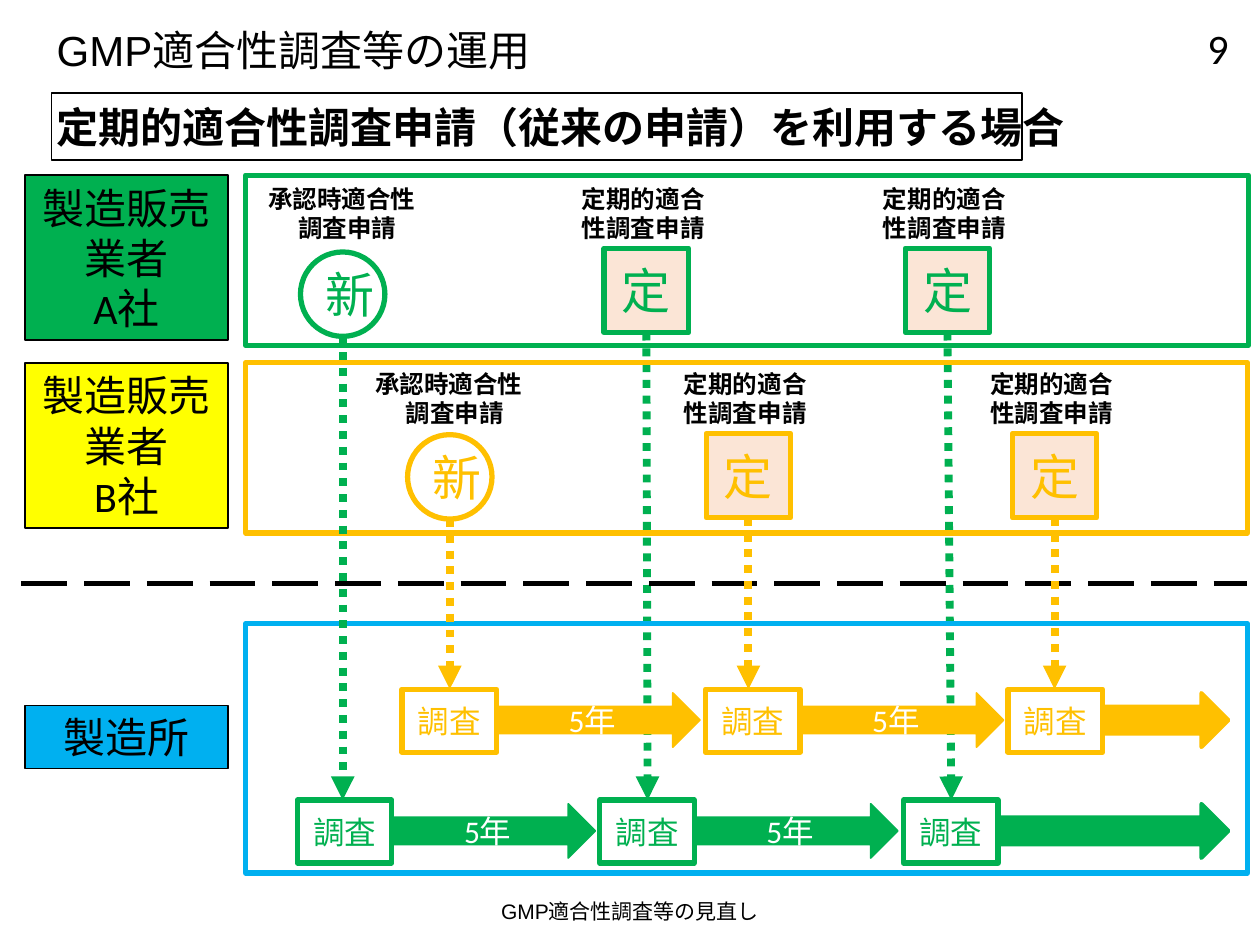
from dataclasses import dataclass

from lxml.etree import SubElement
from pptx import Presentation
from pptx.dml.color import RGBColor as Color
from pptx.enum.dml import MSO_LINE as Dash
from pptx.enum.shapes import MSO_CONNECTOR as Connector, MSO_SHAPE as Preset
from pptx.enum.text import MSO_ANCHOR as Anchor, MSO_AUTO_SIZE as AutoSize, PP_ALIGN as Align
from pptx.oxml.ns import qn
from pptx.util import Inches, Pt

COLUMNS, ROWS = 100, 75  # grid of the slide
SYMBOL = 6.7
SURVEY_WIDTH, SURVEY_HEIGHT = 7.5, 5
ARROW_HEIGHT, ARROW_END = 4.3, 97.5


@dataclass(frozen=True)
class Theme:
    black: str = "000000"
    white: str = "FFFFFF"
    green: str = "00B050"
    amber: str = "FFC000"
    yellow: str = "FFFF00"
    blue: str = "00B0F0"
    peach: str = "FBE5D6"
    heading_font: str = "Arial"
    body_font: str = "Calibri"
    footer: int = 12
    label: int = 14
    survey: int = 18
    heading: int = 24
    symbol: int = 28


@dataclass(frozen=True)
class Company:
    """A company's applications (centre columns) and the surveys that follow them."""
    name: str
    name_fill: str
    color: str
    frame_top: float
    frame_width: float
    label_top: float
    circle_top: float
    square_top: float
    centers: tuple
    targets: tuple
    survey_lefts: tuple
    survey_top: float

    def symbol_top(self, index):
        return self.square_top if index else self.circle_top


class SlideBuilder:
    def __init__(self, presentation, theme):
        self.theme = theme
        self.cell_width = presentation.slide_width / COLUMNS
        self.cell_height = presentation.slide_height / ROWS
        self.slide = presentation.slides.add_slide(presentation.slide_layouts[5])
        self.shapes = self.slide.shapes

    def place(self, left, top, width, height):
        """Turn grid lengths into slide lengths."""
        return (round(left * self.cell_width), round(top * self.cell_height),
                round(width * self.cell_width), round(height * self.cell_height))

    def set_text(self, shape, text, size, color=None, align=Align.CENTER,
                 anchor=Anchor.MIDDLE, bold=False, font=None):
        frame = shape.text_frame
        frame.text = text
        for name, value in {"word_wrap": True, "auto_size": AutoSize.NONE,
                            "vertical_anchor": anchor}.items():
            setattr(frame, name, value)
        formats = {"name": font or self.theme.body_font, "size": Pt(size), "bold": bold}
        for paragraph in frame.paragraphs:
            paragraph.alignment = align
            for name, value in formats.items():
                setattr(paragraph.font, name, value)
            paragraph.font.color.rgb = Color.from_string(color or self.theme.black)

    def title(self, box, text):
        shape = self.shapes.title
        for name, value in zip(("left", "top", "width", "height"), self.place(*box)):
            setattr(shape, name, value)
        self.set_text(shape, text, self.theme.heading, align=Align.LEFT,
                      font=self.theme.heading_font)

    def text(self, box, text, size, **style):
        shape = self.shapes.add_textbox(*self.place(*box))
        self.set_text(shape, text, size, **style)
        return shape

    def shape(self, preset, box, line, line_width, fill=None, text=None, **style):
        shape = self.shapes.add_shape(preset, *self.place(*box))
        shape.shadow.inherit = False
        if fill:
            shape.fill.solid()
            shape.fill.fore_color.rgb = Color.from_string(fill)
        else:
            shape.fill.background()
        shape.line.color.rgb = Color.from_string(line)
        shape.line.width = Pt(line_width)
        if text:
            self.set_text(shape, text, **style)

    def line(self, start, end, color, width, dash, arrow=False):
        connector = self.shapes.add_connector(Connector.STRAIGHT, *self.place(*start, *end))
        connector.line.color.rgb = Color.from_string(color)
        connector.line.width = Pt(width)
        connector.line.dash_style = dash
        properties = connector._element.spPr
        if arrow:
            SubElement(properties.find(qn("a:ln")), qn("a:tailEnd"), type="triangle")
        SubElement(properties, qn("a:effectLst"))

    def name_box(self, top, height, fill, text):
        self.shape(Preset.RECTANGLE, (2, top, 16.1, height), self.theme.black, 1, fill,
                   text, size=self.theme.heading)

    def frame(self, top, width, height, color):
        self.shape(Preset.RECTANGLE, (19.5, top, width, height), color, 3)

    def request(self, company, index):
        """Dotted arrow from an application down to its survey."""
        self.line((company.centers[index], company.symbol_top(index) + SYMBOL),
                  (company.targets[index], company.survey_top),
                  company.color, 4.5, Dash.ROUND_DOT, arrow=True)

    def application(self, company, index):
        theme, center = self.theme, company.centers[index]
        if index:
            preset, fill, symbol, offset = Preset.RECTANGLE, theme.peach, "定", 6.1
            label = "定期的適合\n性調査申請"
        else:
            preset, fill, symbol, offset = Preset.OVAL, None, "新", 6.9
            label = "承認時適合性\n調査申請"
        heading = self.text((center - offset, company.label_top, 14, 5.7), label, theme.label,
                            align=Align.LEFT, anchor=Anchor.TOP, bold=True)
        if not index:
            second = heading.text_frame.paragraphs[1]
            second._p.get_or_add_pPr().set("marL", str(Inches(0.24)))
        box = (center - SYMBOL / 2, company.symbol_top(index), SYMBOL, SYMBOL)
        self.shape(preset, box, company.color, 3, fill, symbol,
                   size=theme.symbol, color=company.color)

    def survey(self, company, index):
        """Survey box and the arrow to the next survey, or to the end."""
        theme, left, top = self.theme, company.survey_lefts[index], company.survey_top
        self.shape(Preset.RECTANGLE, (left, top, SURVEY_WIDTH, SURVEY_HEIGHT), company.color, 3,
                   theme.white, "調査", size=theme.survey, color=company.color)
        if index < len(company.survey_lefts) - 1:
            start, width, line_width, text = left + 7.65, 16, 1, "5年"
        else:
            start, line_width, text = left + SURVEY_WIDTH, 2.25, None
            width = ARROW_END - start
        self.shape(Preset.RIGHT_ARROW, (start, top + 0.3, width, ARROW_HEIGHT), company.color,
                   line_width, company.color, text, size=theme.survey, color=theme.white)


def main():
    presentation = Presentation()
    presentation.slide_width, presentation.slide_height = Inches(10), Inches(7.5)
    theme = Theme()
    builder = SlideBuilder(presentation, theme)
    company_a = Company("A社", theme.green, theme.green, 13.9, 79.6, 14.1, 20, 19.7,
                        (27.2, 51.3, 75.2), (27.2, 51.4, 75.5), (23.6, 47.6, 71.7), 63.5)
    company_b = Company("B社", theme.yellow, theme.amber, 28.8, 79.5, 28.8, 34.5, 34.4,
                        (35.7, 59.4, 83.7), (35.7, 59.4, 83.7), (31.9, 56, 80), 54.7)
    companies = (company_a, company_b)

    builder.title((3.5, 1, 87.9, 5.9), "GMP適合性調査等の運用")
    builder.text((77.9, 1.3, 20.6, 4), "9", theme.heading, align=Align.RIGHT, anchor=Anchor.TOP)
    builder.text((33.1, 70.3, 33.8, 4), "GMP適合性調査等の見直し", theme.footer,
                 font=theme.heading_font)
    builder.text((3.5, 7.6, 94.7, 5), "定期的適合性調査申請（従来の申請）を利用する場合",
                 theme.heading, align=Align.LEFT, anchor=Anchor.TOP, bold=True,
                 font=theme.heading_font)
    builder.shape(Preset.RECTANGLE, (4.1, 7.4, 77, 5.3), theme.black, 1)

    for index in (1, 2):  # these pass behind the frames and the amber arrows
        builder.request(company_a, index)
    for company in companies:
        builder.name_box(company.frame_top, 13.1, company.name_fill,
                         f"製造販売\n業者\n{company.name}")
        builder.frame(company.frame_top, company.frame_width, 13.5, company.color)
    builder.name_box(56, 5, theme.blue, "製造所")
    builder.line((1.7, 46.3), (99, 46.3), theme.black, 3.25, Dash.LONG_DASH)
    builder.frame(49.5, 79.5, 19.8, theme.blue)

    for company in companies:
        for index in range(len(company.centers)):
            builder.application(company, index)
            builder.survey(company, index)
            if company is company_b or index == 0:
                builder.request(company, index)
    presentation.save("out.pptx")


if __name__ == "__main__":
    main()
